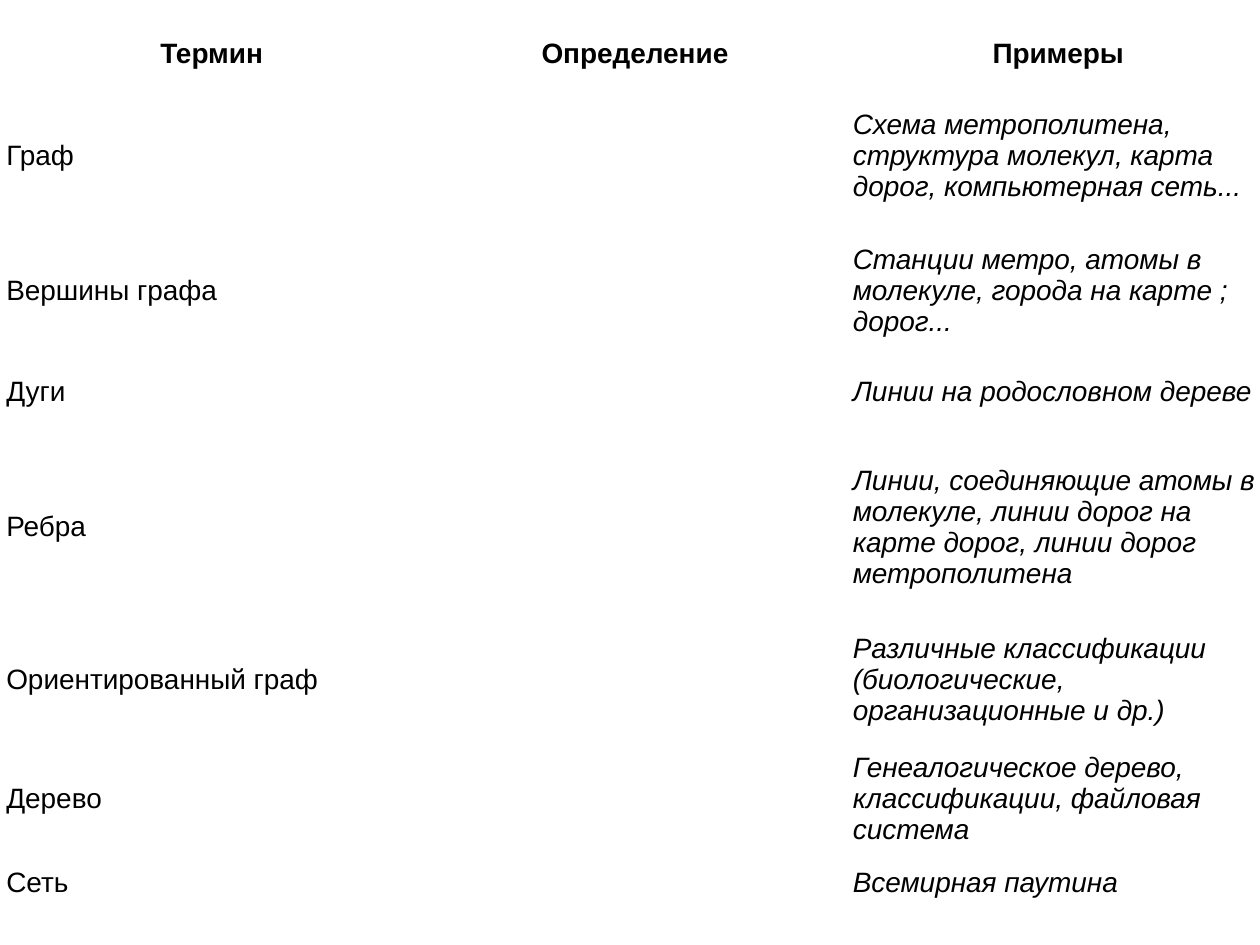
from pptx import Presentation
from pptx.dml.color import RGBColor
from pptx.enum.text import MSO_ANCHOR, PP_ALIGN
from pptx.util import Pt

CENTER, LEFT = PP_ALIGN.CENTER, PP_ALIGN.LEFT
MIDDLE = MSO_ANCHOR.MIDDLE

HEADINGS = ("Термин", "Определение", "Примеры")
TERMS = (
    ("Граф", "", "Схема метрополитена, структура молекул, карта дорог, компьютерная сеть..."),
    ("Вершины графа", "", "Станции метро, атомы в молекуле, города на карте ; дорог..."),
    ("Дуги", "", "Линии на родословном дереве"),
    ("Ребра", "", "Линии, соединяющие атомы в молекуле, линии дорог на карте дорог, линии дорог метрополитена"),
    ("Ориентированный граф", "", "Различные классификации (биологические, организационные и др.)"),
    ("Дерево", "", "Генеалогическое дерево, классификации, файловая система"),
    ("Сеть", "", "Всемирная паутина"),
)
ROW_HEIGHTS = (28.8, 87.1, 67.7, 47.5, 107.3, 67.7, 67.7, 28.8)
EXAMPLES_COLUMN = 2
CELL_FORMAT = {
    "margin_left": Pt(3.6),
    "margin_right": Pt(3.6),
    "margin_top": Pt(3.6),
    "margin_bottom": Pt(3.6),
    "vertical_anchor": MIDDLE,
}
TABLE_FORMAT = {"first_row": False, "horz_banding": False}


def color(value):
    """Turn a hex string into a colour."""
    return RGBColor.from_string(value)


def apply_format(target, values):
    """Set each attribute of the target from a dict."""
    for name, value in values.items():
        setattr(target, name, value)


def fill_cell(cell, text, is_heading, is_example):
    """Write one formatted cell of the glossary."""
    apply_format(cell, CELL_FORMAT)
    cell.fill.background()
    para = cell.text_frame.paragraphs[0]
    para.alignment = CENTER if is_heading else LEFT
    apply_format(para.font, {"name": "Arial", "size": Pt(16)})
    if text:
        span = para.add_run()
        span.text = text
        apply_format(span.font, {
            "name": "Arial",
            "size": Pt(16),
            "bold": is_heading,
            "italic": is_example and not is_heading,
        })
        span.font.color.rgb = color("000000")


def add_glossary(page, left, top, width):
    """Place the table of graph terms and examples."""
    rows = (HEADINGS, *TERMS)
    frame = page.shapes.add_table(
        len(rows), len(HEADINGS), Pt(left), Pt(top), Pt(width), Pt(sum(ROW_HEIGHTS)))
    table = frame.table
    apply_format(table, TABLE_FORMAT)
    for column in table.columns:
        column.width = Pt(width / len(HEADINGS))
    for row_index, (texts, height) in enumerate(zip(rows, ROW_HEIGHTS)):
        table.rows[row_index].height = Pt(height)
        for column_index, text in enumerate(texts):
            fill_cell(table.cell(row_index, column_index), text,
                      row_index == 0, column_index == EXAMPLES_COLUMN)


def main():
    """Build and save the deck."""
    deck = Presentation()
    deck.slide_width, deck.slide_height = Pt(720), Pt(540)
    page = deck.slides.add_slide(deck.slide_layouts[6])
    add_glossary(page, 0, 16.5, 725.7)
    deck.save("out.pptx")


if __name__ == "__main__":
    main()
